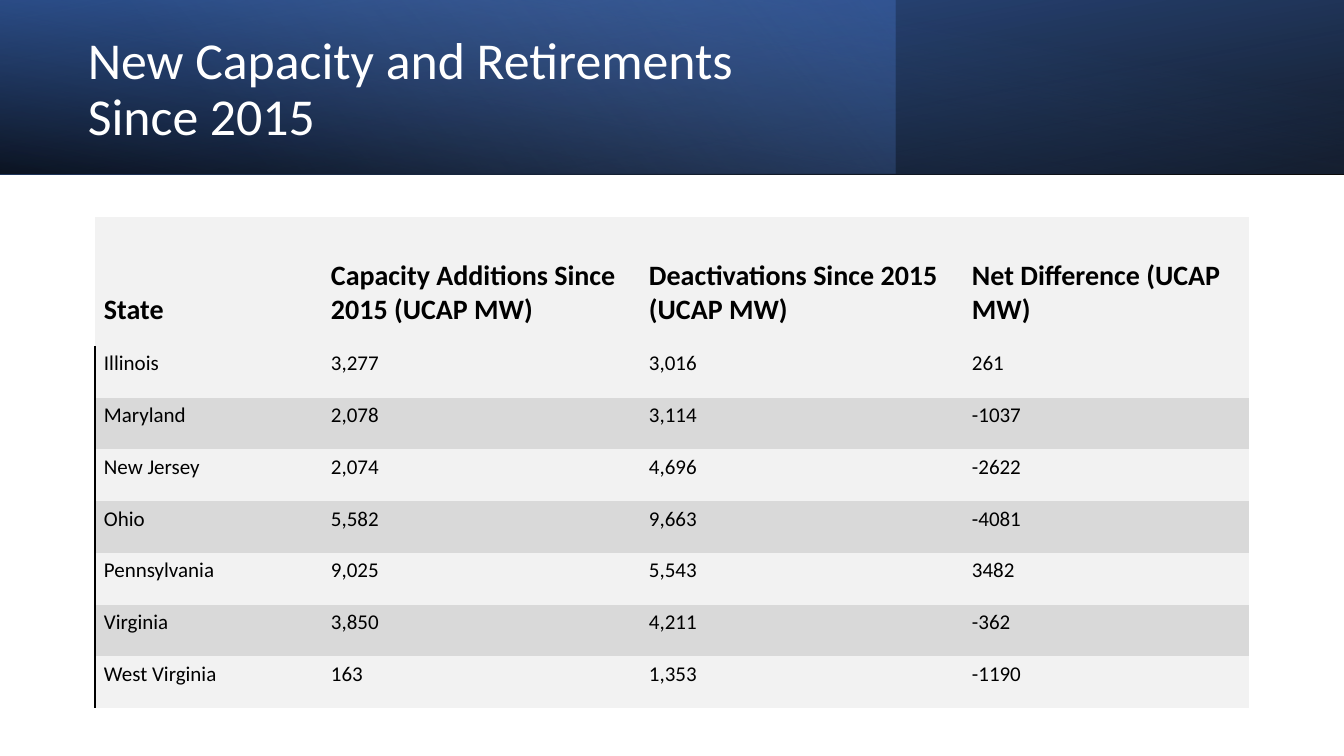
import lxml.etree
import pptx
import pptx.dml.color
import pptx.enum.shapes
import pptx.enum.text
import pptx.oxml
import pptx.oxml.ns
import pptx.util

PX = 914400 / 100.8
FONT = "Calibri"
COLORS = {
    "black": "000000",
    "white": "FFFFFF",
    "navy": "2F5597",
    "blue": "4472C4",
    "pale_blue": "8FAADC",
    "light_row": "F2F2F2",
    "dark_row": "D9D9D9",
}
NO_STYLE_TABLE = "{2D5ABB26-0587-4C30-8999-92F81FD0307C}"
SLIDE_WIDTH, SLIDE_HEIGHT = 1344, 756
BANNER_HEIGHT = 174
COLUMN_WIDTHS = [227, 318, 323, 286]
HEADER_HEIGHT, BODY_HEIGHT = 129, 362
HEADERS = [
    "State",
    "Capacity Additions Since 2015 (UCAP MW)",
    "Deactivations Since 2015 (UCAP MW)",
    "Net Difference (UCAP MW)",
]
STATES = [
    ["Illinois", "3,277", "3,016", "261"],
    ["Maryland", "2,078", "3,114", "-1037"],
    ["New Jersey", "2,074", "4,696", "-2622"],
    ["Ohio", "5,582", "9,663", "-4081"],
    ["Pennsylvania", "9,025", "5,543", "3482"],
    ["Virginia", "3,850", "4,211", "-362"],
    ["West Virginia", "163", "1,353", "-1190"],
]


def emu(pixels):
    return pptx.util.Emu(round(pixels * PX))


def rgb(color):
    return pptx.dml.color.RGBColor.from_string(COLORS[color])


def format_text(paragraph, size, color, bold=False):
    for run in paragraph.runs:
        run.font.name = FONT
        run.font.size = pptx.util.Pt(size)
        run.font.bold = bold
        run.font.color.rgb = rgb(color)


def add_gradient_band(slide, width, stops, angle, rotation=0, flipped=False):
    shape = slide.shapes.add_shape(
        pptx.enum.shapes.MSO_SHAPE.RECTANGLE, 0, 0, emu(width), emu(BANNER_HEIGHT)
    )
    shape.shadow.inherit = False
    shape.line.fill.background()
    shape.rotation = rotation
    properties = shape._element.spPr
    if flipped:
        properties.find(pptx.oxml.ns.qn("a:xfrm")).set("flipH", "1")
    stop_list = "".join(
        f'<a:gs pos="{position * 1000}"><a:srgbClr val="{COLORS[color]}">'
        f'<a:alpha val="{opacity * 1000}"/></a:srgbClr></a:gs>'
        for position, color, opacity in stops
    )
    gradient = pptx.oxml.parse_xml(
        f'<a:gradFill {pptx.oxml.ns.nsdecls("a")} rotWithShape="1">'
        f'<a:gsLst>{stop_list}</a:gsLst>'
        f'<a:lin ang="{angle * 60000}" scaled="0"/></a:gradFill>'
    )
    properties.find(pptx.oxml.ns.qn("a:prstGeom")).addnext(gradient)


def add_title(slide, text):
    box = slide.shapes.add_textbox(emu(78), emu(27), emu(778), emu(128))
    text_frame = box.text_frame
    text_frame.word_wrap = True
    text_frame.vertical_anchor = pptx.enum.text.MSO_ANCHOR.MIDDLE
    text_frame.text = text
    paragraph = text_frame.paragraphs[0]
    paragraph.line_spacing = 0.9
    format_text(paragraph, 37, "white")


def add_left_border(cell):
    border = pptx.oxml.parse_xml(
        f'<a:lnL {pptx.oxml.ns.nsdecls("a")} w="12700"><a:solidFill>'
        f'<a:srgbClr val="{COLORS["black"]}"/></a:solidFill></a:lnL>'
    )
    cell._tc.get_or_add_tcPr().insert(0, border)


def fill_cell(cell, text, fill, is_header):
    anchors = pptx.enum.text.MSO_ANCHOR
    cell.fill.solid()
    cell.fill.fore_color.rgb = rgb(fill)
    cell.margin_left, cell.margin_top = emu(9), emu(3)
    cell.margin_right, cell.margin_bottom = emu(4), emu(19)
    cell.vertical_anchor = anchors.BOTTOM if is_header else anchors.MIDDLE
    cell.text_frame.text = text
    format_text(cell.text_frame.paragraphs[0], 20 if is_header else 15, "black", is_header)


def add_capacity_table(slide):
    rows = [HEADERS] + STATES
    table = slide.shapes.add_table(
        len(rows), len(HEADERS), emu(95), emu(217),
        emu(sum(COLUMN_WIDTHS)), emu(HEADER_HEIGHT + BODY_HEIGHT),
    ).table
    table.first_row = False
    table.horz_banding = False
    table._tbl.tblPr.find(pptx.oxml.ns.qn("a:tableStyleId")).text = NO_STYLE_TABLE
    for column, width in zip(table.columns, COLUMN_WIDTHS):
        column.width = emu(width)
    for row_index, values in enumerate(rows):
        is_header = row_index == 0
        height = HEADER_HEIGHT if is_header else BODY_HEIGHT / len(STATES)
        table.rows[row_index].height = emu(height)
        fill = "light_row" if is_header or row_index % 2 else "dark_row"
        for column_index, text in enumerate(values):
            fill_cell(table.cell(row_index, column_index), text, fill, is_header)
        if not is_header:
            add_left_border(table.cell(row_index, 0))


def main():
    presentation = pptx.Presentation()
    presentation.slide_width = emu(SLIDE_WIDTH)
    presentation.slide_height = emu(SLIDE_HEIGHT)
    slide = presentation.slides.add_slide(presentation.slide_layouts[6])
    add_gradient_band(
        slide, SLIDE_WIDTH, [(0, "black", 96), (100, "navy", 100)], 100,
        rotation=180, flipped=True,
    )
    add_gradient_band(slide, 896, [(0, "blue", 41), (74, "pale_blue", 0)], 140)
    add_gradient_band(
        slide, SLIDE_WIDTH, [(0, "black", 63), (78, "blue", 15)], 260, flipped=True
    )
    add_title(slide, "New Capacity and Retirements Since 2015")
    add_capacity_table(slide)
    presentation.save("out.pptx")


if __name__ == "__main__":
    main()
